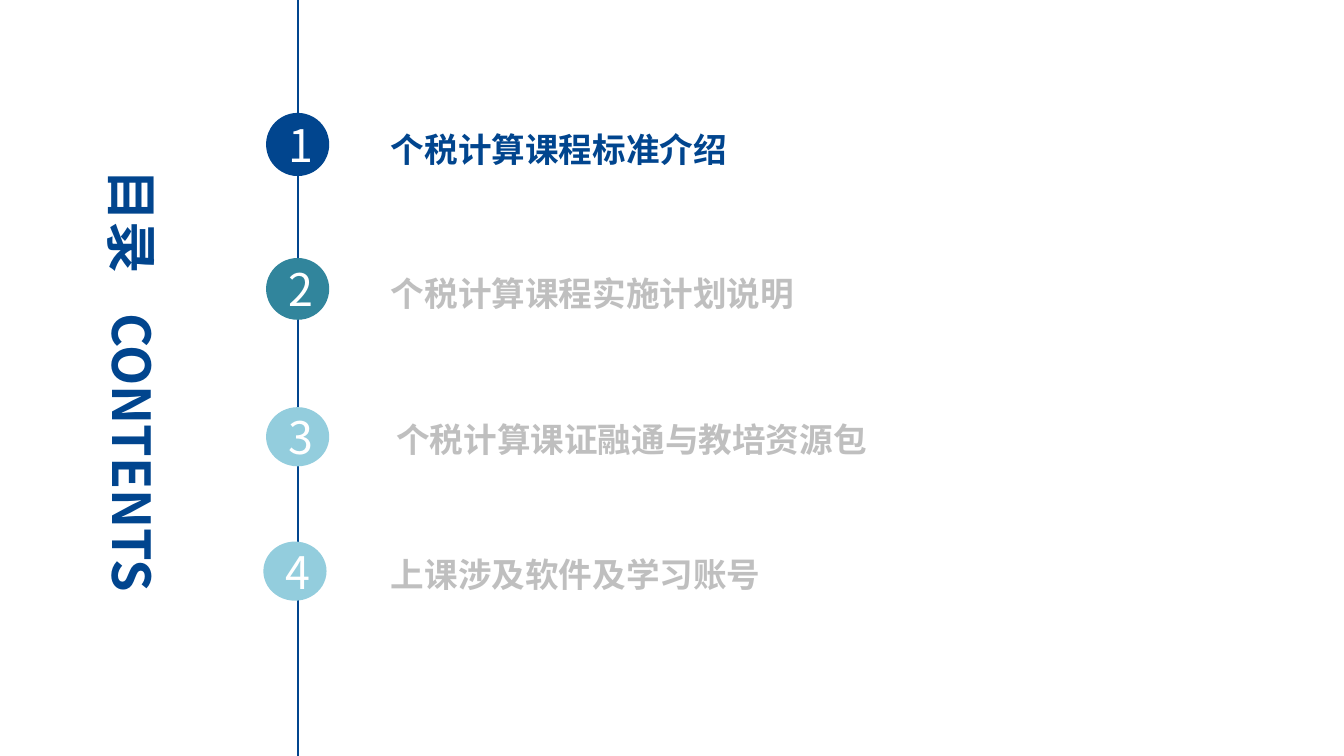
from dataclasses import dataclass

from lxml import etree
from pptx import Presentation
from pptx.dml.color import RGBColor
from pptx.enum.shapes import MSO_CONNECTOR, MSO_SHAPE
from pptx.enum.text import MSO_ANCHOR, MSO_AUTO_SIZE, PP_ALIGN
from pptx.oxml.ns import qn
from pptx.slide import Slide
from pptx.text.text import TextFrame
from pptx.util import Inches, Pt

OVAL = MSO_SHAPE.OVAL
LINE = MSO_CONNECTOR.STRAIGHT
MIDDLE = MSO_ANCHOR.MIDDLE
CENTER = PP_ALIGN.CENTER
GROW = MSO_AUTO_SIZE.SHAPE_TO_FIT_TEXT

WIDE = Inches(10)
HIGH = WIDE * 9 // 16
CELL = WIDE / 100  # the slide is a grid of 100 columns by 56.25 rows
AXIS = 22.15
DOT = 4.7


@dataclass(frozen=True)
class Theme:
    navy: str = "01458E"
    teal: str = "31859C"
    sky: str = "93CDDD"
    gray: str = "BFBFBF"
    white: str = "FFFFFF"
    head: int = 28
    digit: int = 24
    body: int = 18
    rule: float = 1.25
    latin: str = "Calibri"
    asian: str = "Noto Sans CJK SC"


@dataclass(frozen=True)
class Topic:
    text: str
    top: float
    tall: float
    fill: str
    ink: str
    wide: float
    left: float = 28.1
    mid: float = AXIS


@dataclass(frozen=True)
class Title:
    text: str
    mid: float
    wide: float


THEME = Theme()
TOPICS = (
    Topic("个税计算课程标准介绍", 8.4, 4.7, THEME.navy, THEME.navy, 52.4),
    Topic("个税计算课程实施计划说明", 19.2, 4.6, THEME.teal, THEME.gray, 66.3),
    Topic("个税计算课证融通与教培资源包", 30.3, 4.4, THEME.sky, THEME.gray, 65.8,
          left=28.5),
    Topic("上课涉及软件及学习账号", 40.3, 4.4, THEME.sky, THEME.gray, 65.8,
          mid=AXIS - 0.2),
)
TITLES = (Title("目录", 16.55, 9.9), Title("CONTENTS", 34.35, 24))


def span(*cells: float) -> list[int]:
    """Turn grid cells into slide lengths."""
    return [round(cell * CELL) for cell in cells]


def write(frame: TextFrame, text: str, size: int, ink: str,
          face: str, bold: bool = False) -> None:
    frame.text = text
    run = frame.paragraphs[0].runs[0]
    font = run.font
    font.name, font.size, font.bold = face, Pt(size), bold
    font.color.rgb = RGBColor.from_string(ink)
    etree.SubElement(font._element, qn("a:ea"), typeface=THEME.asian)


def label(slide: Slide, box: list[int], text: str, size: int, ink: str,
          face: str, wrap: bool = True, turn: int = 0) -> None:
    shape = slide.shapes.add_textbox(*box)
    shape.rotation = turn
    frame = shape.text_frame
    frame.word_wrap = wrap
    frame.auto_size = GROW
    write(frame, text, size, ink, face, bold=True)


def draw_title(slide: Slide, title: Title) -> None:
    tall = 5.7
    box = span(9.92 - title.wide / 2, title.mid - tall / 2, title.wide, tall)
    label(slide, box, title.text, THEME.head, THEME.navy, THEME.asian,
          wrap=False, turn=90)


def draw_axis(slide: Slide) -> None:
    spot, = span(AXIS)
    line = slide.shapes.add_connector(LINE, spot, 0, spot, HIGH)
    line.line.color.rgb = RGBColor.from_string(THEME.navy)
    line.line.width = Pt(THEME.rule)
    etree.SubElement(line._element.spPr, qn("a:effectLst"))


def draw_topic(slide: Slide, rank: int, topic: Topic) -> None:
    """Draw a numbered dot and a label that share their lower edge."""
    dot = slide.shapes.add_shape(
        OVAL, *span(topic.mid - DOT / 2, topic.top, DOT, topic.tall))
    dot.shadow.inherit = False
    dot.fill.solid()
    dot.fill.fore_color.rgb = RGBColor.from_string(topic.fill)
    dot.line.fill.background()
    frame = dot.text_frame
    write(frame, str(rank), THEME.digit, THEME.white, THEME.asian)
    frame.vertical_anchor = MIDDLE
    frame.paragraphs[0].alignment = CENTER

    tall = 4
    box = span(topic.left, topic.top + topic.tall - tall, topic.wide, tall)
    label(slide, box, topic.text, THEME.body, topic.ink, THEME.latin)


def main() -> None:
    deck = Presentation()
    deck.slide_width, deck.slide_height = WIDE, HIGH
    slide = deck.slides.add_slide(deck.slide_layouts[6])
    for title in TITLES:
        draw_title(slide, title)
    draw_axis(slide)
    for rank, topic in enumerate(TOPICS, 1):
        draw_topic(slide, rank, topic)
    deck.save("out.pptx")


if __name__ == "__main__":
    main()
